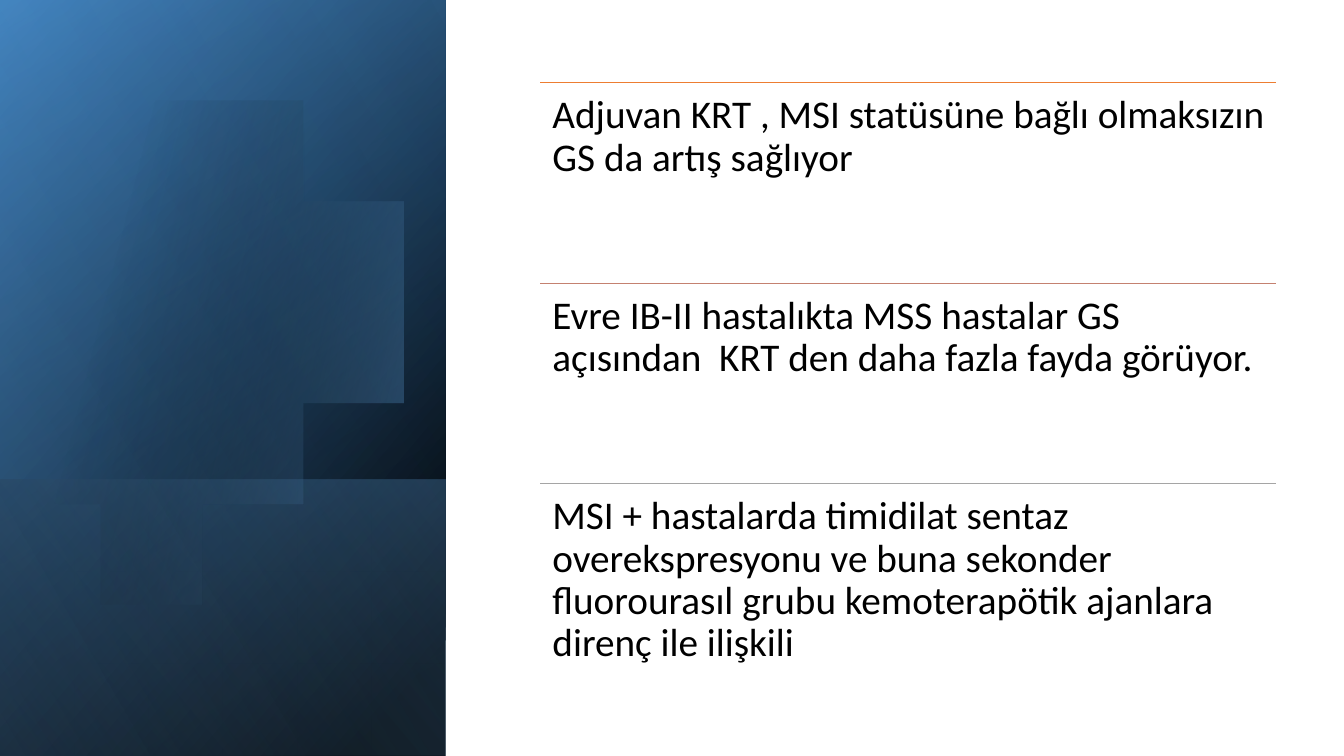
import math
from lxml import etree
from pptx import Presentation
from pptx.dml.color import RGBColor
from pptx.enum import shapes, text
from pptx.oxml.ns import qn
from pptx.util import Inches, Pt

# Content: rule colour and statement
FINDINGS = [
    ("ED7D31", "Adjuvan KRT , MSI statüsüne bağlı olmaksızın GS da artış sağlıyor"),
    ("C48170", "Evre IB-II hastalıkta MSS hastalar GS açısından  KRT den daha "
               "fazla fayda görüyor."),
    ("A5A5A5", "MSI + hastalarda timidilat sentaz overekspresyonu ve buna sekonder "
               "fluorourasıl grubu kemoterapötik ajanlara direnç ile ilişkili"),
]

THEME = {
    "font": "Calibri", "size": Pt(28), "ink": RGBColor(0, 0, 0), "rule": Pt(0.5),
    # Gradients: angle, then (position %, colour, opacity %)
    "base": (50, [(8, "000000", 100), (100, "2E75B6", 100)]),
    "glow": (30, [(0, "000000", 0), (99, "5B9BD5", 46)]),
    "foot": (130, [(2, "5B9BD5", 29), (100, "000000", 30)]),
    "disc": (14, [(29, "000000", 0), (100, "5B9BD5", 43)]),
    "sheen": (120, [(0, "000000", 0), (99, "9DC3E6", 11)]),
}

SLIDE_W, SLIDE_H = 13.33, 7.5
PANEL_W, FOOT_H = 4.42, 2.74
DISC_X, DISC_Y, DISC_R, DISC_CUT = 1.44, 3.38, 2.29, -0.15
LIST_X, LIST_Y, LIST_W, ROW_H, INSET = 5.36, 0.82, 7.3, 1.99, 0.12

prs = Presentation()
prs.slide_width, prs.slide_height = Inches(SLIDE_W), Inches(SLIDE_H)
slide = prs.slides.add_slide(prs.slide_layouts[6])


def paint(shape, gradient):
    """Fill a shape with a linear gradient and no outline."""
    angle, stops = gradient
    shape.shadow.inherit = False
    shape.line.fill.background()
    shape.fill.gradient()
    grad = shape.fill._xPr.find(qn("a:gradFill"))
    for child in list(grad):
        grad.remove(child)
    grad.set("rotWithShape", "1")
    stop_list = etree.SubElement(grad, qn("a:gsLst"))
    for position, colour, opacity in stops:
        stop = etree.SubElement(stop_list, qn("a:gs"), pos=str(position * 1000))
        rgb = etree.SubElement(stop, qn("a:srgbClr"), val=colour)
        if opacity < 100:
            etree.SubElement(rgb, qn("a:alpha"), val=str(opacity * 1000))
    etree.SubElement(grad, qn("a:lin"), ang=str(angle * 60000), scaled="0")


def add_panel(height, gradient):
    """Add a quarter-turned, mirrored band that ends at the slide's foot."""
    middle_x, middle_y = PANEL_W / 2, SLIDE_H - height / 2
    panel = slide.shapes.add_shape(
        shapes.MSO_SHAPE.RECTANGLE, Inches(middle_x - height / 2),
        Inches(middle_y - PANEL_W / 2), Inches(height), Inches(PANEL_W))
    panel.rotation = 90
    panel._element.spPr.find(qn("a:xfrm")).set("flipH", "1")
    paint(panel, gradient)


def add_disc():
    """Add a circle cut off by a vertical chord on its left."""
    limit = math.acos((DISC_CUT - DISC_X) / DISC_R)
    steps = 120
    angles = [limit * (2 * i / steps - 1) for i in range(steps + 1)]
    points = [(DISC_X + DISC_R * math.cos(a), DISC_Y + DISC_R * math.sin(a))
              for a in angles]
    outline = slide.shapes.build_freeform(*points[0], scale=Inches(1))
    outline.add_line_segments(points[1:], close=True)
    paint(outline.convert_to_shape(), THEME["disc"])


def add_finding(row, colour, statement):
    """Add a rule with its statement beneath."""
    top = LIST_Y + row * ROW_H
    rule = slide.shapes.add_connector(
        shapes.MSO_CONNECTOR.STRAIGHT, Inches(LIST_X), Inches(top),
        Inches(LIST_X + LIST_W), Inches(top))
    rule.line.color.rgb = RGBColor.from_string(colour)
    rule.line.width = THEME["rule"]
    etree.SubElement(rule._element.spPr, qn("a:effectLst"))

    frame = slide.shapes.add_textbox(
        Inches(LIST_X), Inches(top), Inches(LIST_W), Inches(ROW_H)).text_frame
    frame_format = {"word_wrap": True, "vertical_anchor": text.MSO_ANCHOR.TOP}
    for side in ("left", "top", "right", "bottom"):
        frame_format[f"margin_{side}"] = Inches(INSET)
    for name, value in frame_format.items():
        setattr(frame, name, value)
    paragraph = frame.paragraphs[0]
    paragraph.line_spacing = 0.9
    run = paragraph.add_run()
    run.text = statement
    for name, value in {"name": THEME["font"], "size": THEME["size"]}.items():
        setattr(run.font, name, value)
    run.font.color.rgb = THEME["ink"]


# Decorated side panel, back to front
add_panel(SLIDE_H, THEME["base"])
add_panel(SLIDE_H, THEME["glow"])
add_panel(FOOT_H, THEME["foot"])
add_disc()
add_panel(SLIDE_H, THEME["sheen"])

# Findings
for row, (colour, statement) in enumerate(FINDINGS):
    add_finding(row, colour, statement)

prs.save("out.pptx")
